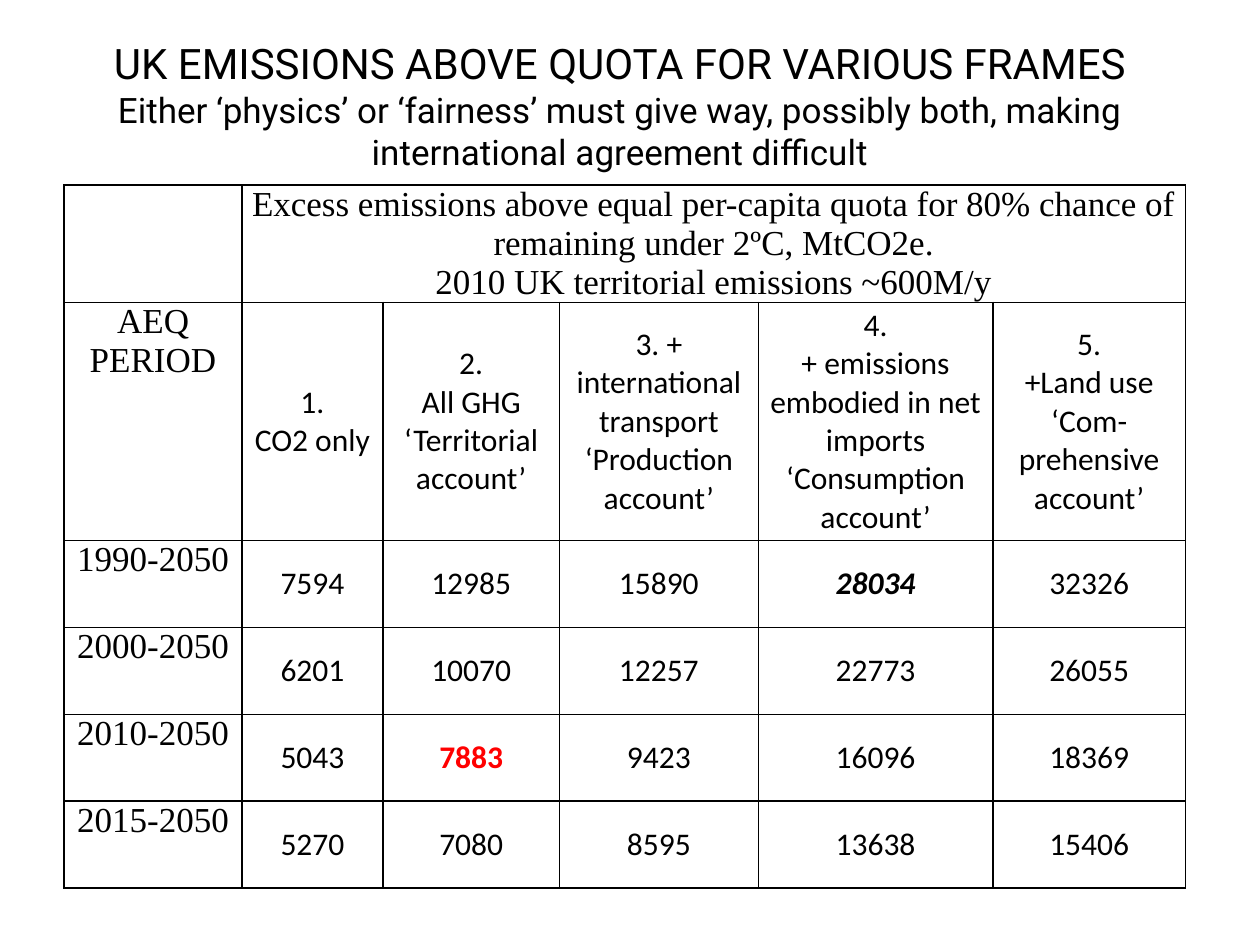
from dataclasses import dataclass

from lxml import etree
from pptx import Presentation
from pptx.dml.color import RGBColor
from pptx.enum import text
from pptx.oxml import ns
from pptx.util import Inches, Pt


@dataclass(frozen=True)
class Theme:
    ink: str = "000000"
    alert: str = "FF0000"
    head: str = "Roboto"
    serif: str = "Times New Roman"
    sans: str = "Calibri"
    title: int = 24
    label: int = 20
    body: int = 18
    rule: int = 1


class Deck:
    """Holds the theme and the current slide."""

    def __init__(self, theme):
        self.theme = theme
        self.prs = Presentation()
        self.prs.slide_width, self.prs.slide_height = Inches(10), Inches(7.5)
        self.slide = self.prs.slides.add_slide(self.prs.slide_layouts[5])

    def style(self, font, face, size, color=None, bold=False, italic=False):
        font.name, font.size = face, Pt(size)
        font.bold, font.italic = bold, italic
        font.color.rgb = RGBColor.from_string(color or self.theme.ink)

    def title(self, box, main, sub):
        shape = self.slide.shapes.title
        shape.left, shape.top, shape.width, shape.height = map(Inches, box)
        frame = shape.text_frame
        frame.word_wrap = True
        frame.auto_size = text.MSO_AUTO_SIZE.NONE
        frame.vertical_anchor = text.MSO_ANCHOR.MIDDLE
        para = frame.paragraphs[0]
        para.alignment = text.PP_ALIGN.CENTER
        for words, size in ((main, self.theme.title), (sub, self.theme.label)):
            if para.runs:
                para.add_line_break()
            run = para.add_run()
            run.text = words
            self.style(run.font, self.theme.head, size)

    def border(self, cell):
        props = cell._tc.get_or_add_tcPr()
        for side in ("lnL", "lnR", "lnT", "lnB"):
            line = etree.SubElement(props, ns.qn(f"a:{side}"), w=str(Pt(self.theme.rule)))
            fill = etree.SubElement(line, ns.qn("a:solidFill"))
            etree.SubElement(fill, ns.qn("a:srgbClr"), val=self.theme.ink)

    def cell(self, cell, words, label, middle, **marks):
        self.border(cell)
        cell.fill.background()
        cell.margin_left = cell.margin_right = Inches(0.07)
        cell.margin_top = cell.margin_bottom = 0
        cell.vertical_anchor = text.MSO_ANCHOR.MIDDLE if middle else text.MSO_ANCHOR.TOP
        cell.text = words
        th = self.theme
        face, size = (th.serif, th.label) if label else (th.sans, th.body)
        for para in cell.text_frame.paragraphs:
            para.alignment = text.PP_ALIGN.CENTER
            self.style(para.font, face, size, **marks)

    def table(self, left, top, cols, rows, data, marks):
        grid = self.slide.shapes.add_table(
            len(rows), len(cols), Inches(left), Inches(top),
            Inches(sum(cols)), Inches(sum(rows))).table
        grid.first_row = grid.horz_banding = False
        for col, width in zip(grid.columns, cols):
            col.width = Inches(width)
        for row, height in zip(grid.rows, rows):
            row.height = Inches(height)
        for r, line in enumerate(data):
            for c, words in enumerate(line):
                self.cell(grid.cell(r, c), words, label=r == 0 or c == 0,
                          middle=c > 0, **marks.get(words, {}))
        # The heading runs across all value columns
        grid.cell(0, 1).merge(grid.cell(0, len(cols) - 1))


def main():
    theme = Theme()
    deck = Deck(theme)

    # Title and subtitle
    deck.title((0.67, 0.21, 8.5, 1.25),
               "UK EMISSIONS ABOVE QUOTA FOR VARIOUS FRAMES",
               "Either ‘physics’ or ‘fairness’ must give way, possibly both, "
               "making international agreement difficult")

    # Emissions by period and account
    data = [
        ["", "Excess emissions above equal per-capita quota for 80% chance of "
         "remaining under 2ºC, MtCO2e.\n2010 UK territorial emissions ~600M/y",
         "", "", "", ""],
        ["AEQ PERIOD", "1.\nCO2 only", "2.\nAll GHG ‘Territorial account’",
         "3. + international transport ‘Production account’",
         "4.\n+ emissions embodied in net imports ‘Consumption account’",
         "5.\n+Land use ‘Com-prehensive account’"],
        ["1990-2050", "7594", "12985", "15890", "28034", "32326"],
        ["2000-2050", "6201", "10070", "12257", "22773", "26055"],
        ["2010-2050", "5043", "7883", "9423", "16096", "18369"],
        ["2015-2050", "5270", "7080", "8595", "13638", "15406"],
    ]
    marks = {"28034": dict(bold=True, italic=True),
             "7883": dict(bold=True, color=theme.alert)}
    deck.table(0.51, 1.47, [1.41, 1.12, 1.4, 1.58, 1.86, 1.53],
               [0.93, 1.89] + [0.69] * 4, data, marks)

    deck.prs.save("out.pptx")


if __name__ == "__main__":
    main()
